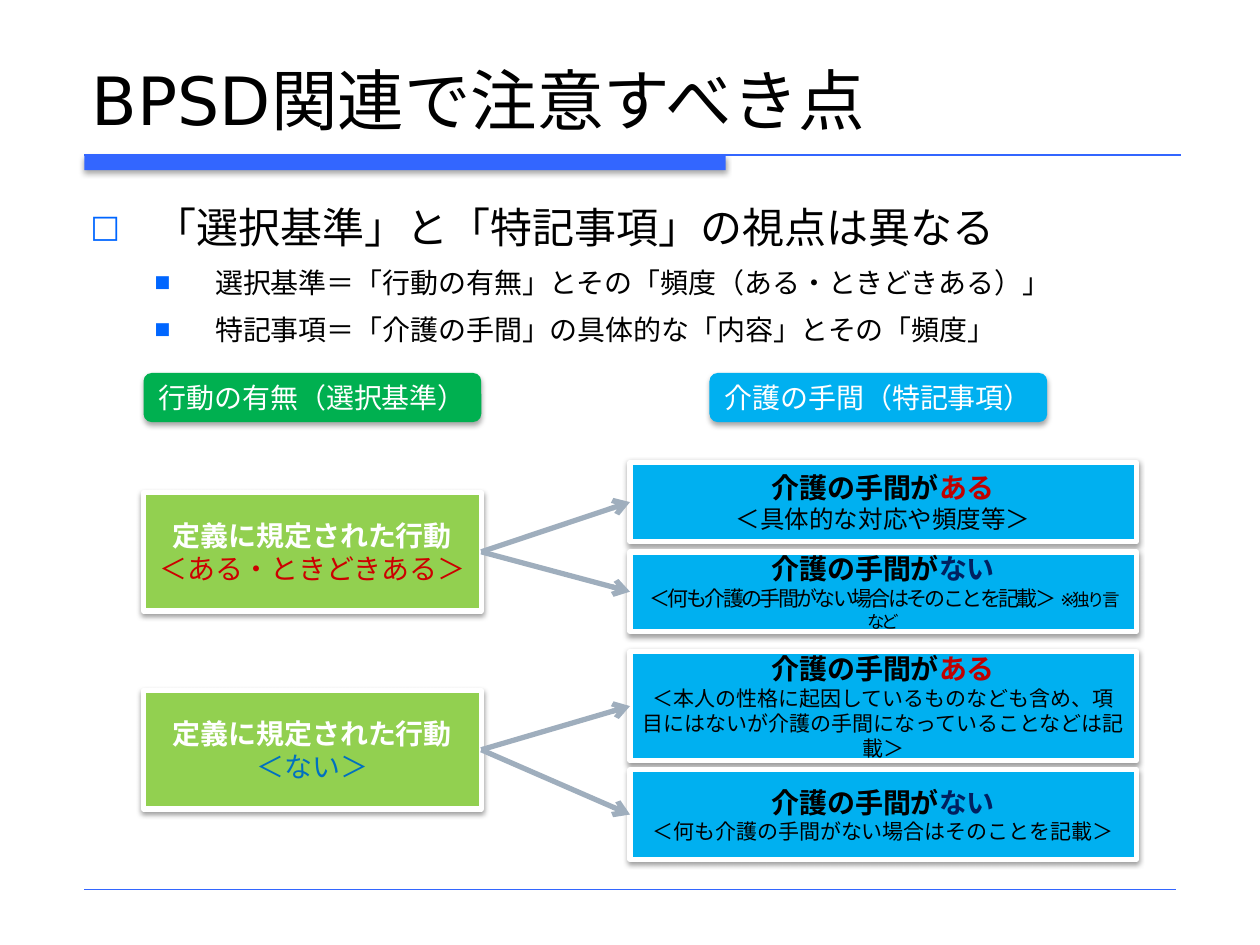
from dataclasses import dataclass

from lxml import etree
from pptx import Presentation
from pptx.dml.color import RGBColor
from pptx.enum.lang import MSO_LANGUAGE_ID
from pptx.enum.shapes import MSO_CONNECTOR, MSO_SHAPE
from pptx.enum.text import MSO_ANCHOR, PP_ALIGN
from pptx.oxml.ns import qn
from pptx.util import Pt

RECTANGLE = MSO_SHAPE.RECTANGLE
ROUNDED = MSO_SHAPE.ROUNDED_RECTANGLE
STRAIGHT = MSO_CONNECTOR.STRAIGHT
CENTER = PP_ALIGN.CENTER
JAPANESE = MSO_LANGUAGE_ID.JAPANESE
FONT = "DejaVu Sans"
BLACK, WHITE, RULE_BLUE, BULLET_BLUE = "000000", "FFFFFF", "3366FF", "0066FF"
GREEN, LIME, SKY, ARROW_GRAY = "00B050", "92D050", "00B0F0", "9FAEBD"
LEFT_X, LEFT_WIDTH = 82, 193
RIGHT_X, RIGHT_WIDTH = 360, 289.4


@dataclass
class TextRun:
    text: str
    size: float
    color: str = BLACK
    bold: bool = False
    spacing: float = 0


@dataclass
class Bullet:
    text: str
    size: float
    symbol: str
    percent: int
    indent: float
    hanging: float
    space_before: float
    level: int


@dataclass
class Burden:
    top: float
    height: float
    answer: TextRun
    details: list[TextRun]


@dataclass
class Behaviour:
    top: float
    answer: TextRun
    burdens: list[Burden]


def rgb(color: str) -> RGBColor:
    return RGBColor.from_string(color)


def add_run(paragraph, item: TextRun) -> None:
    run = paragraph.add_run()
    run.text = item.text
    font = run.font
    font.name, font.size, font.bold = FONT, Pt(item.size), item.bold
    font.language_id = JAPANESE
    font.color.rgb = rgb(item.color)
    properties = run._r.get_or_add_rPr()
    if item.spacing:
        properties.set("spc", str(int(item.spacing * 100)))
    etree.SubElement(properties, qn("a:ea"), typeface=FONT)


def add_text_box(slide, left: float, top: float, width: float, height: float, anchor):
    frame = slide.shapes.add_textbox(Pt(left), Pt(top), Pt(width), Pt(height)).text_frame
    frame.word_wrap = True
    frame.vertical_anchor = anchor
    return frame


def add_bullet(paragraph, bullet: Bullet) -> None:
    paragraph.level = bullet.level
    paragraph.line_spacing = 1.2
    paragraph.space_before = Pt(bullet.space_before)
    properties = paragraph._p.get_or_add_pPr()
    properties.set("marL", str(Pt(bullet.indent)))
    properties.set("indent", str(-Pt(bullet.hanging)))
    color = etree.SubElement(properties, qn("a:buClr"))
    etree.SubElement(color, qn("a:srgbClr"), val=BULLET_BLUE)
    etree.SubElement(properties, qn("a:buSzPct"), val=str(bullet.percent * 1000))
    etree.SubElement(properties, qn("a:buFont"), typeface=FONT)
    etree.SubElement(properties, qn("a:buChar"), char=bullet.symbol)
    add_run(paragraph, TextRun(bullet.text, bullet.size))


def add_shadow(shape, opacity: int, distance: float) -> None:
    shape.shadow.inherit = False
    effects = shape._element.spPr.find(qn("a:effectLst"))
    shadow = etree.SubElement(
        effects, qn("a:outerShdw"), blurRad=str(Pt(3.1)), dist=str(Pt(distance)),
        dir="5400000", rotWithShape="0")
    color = etree.SubElement(shadow, qn("a:srgbClr"), val=BLACK)
    etree.SubElement(color, qn("a:alpha"), val=str(opacity * 1000))


def add_box(slide, preset, left: float, top: float, width: float, height: float,
            fill: str, lines: list[list[TextRun]], outlined: bool = True):
    shape = slide.shapes.add_shape(preset, Pt(left), Pt(top), Pt(width), Pt(height))
    shape.fill.solid()
    shape.fill.fore_color.rgb = rgb(fill)
    if outlined:
        shape.line.color.rgb = rgb(WHITE)
        shape.line.width = Pt(3)
        add_shadow(shape, 38, 1.6)
    else:
        shape.line.fill.background()
        add_shadow(shape, 35, 1.8)
    frame = shape.text_frame
    frame.word_wrap = True
    frame.vertical_anchor = MSO_ANCHOR.MIDDLE
    for index, line in enumerate(lines):
        paragraph = frame.add_paragraph() if index else frame.paragraphs[0]
        paragraph.alignment = CENTER
        for item in line:
            add_run(paragraph, item)
    return shape


def add_line(slide, left: float, top: float, right: float, bottom: float,
             color: str, width: float):
    line = slide.shapes.add_connector(STRAIGHT, Pt(left), Pt(top), Pt(right), Pt(bottom))
    line.line.color.rgb = rgb(color)
    line.line.width = Pt(width)
    etree.SubElement(line._element.spPr, qn("a:effectLst"))
    return line


def join_with_arrow(slide, source, target) -> None:
    arrow = add_line(slide, 0, 0, 0, 0, ARROW_GRAY, 3)
    arrow.begin_connect(source, 3)
    arrow.end_connect(target, 1)
    etree.SubElement(arrow.line._get_or_add_ln(), qn("a:tailEnd"), type="arrow")


def add_behaviour(slide, behaviour: Behaviour) -> None:
    source = add_box(slide, RECTANGLE, LEFT_X, behaviour.top, LEFT_WIDTH, 67.7, LIME,
                     [[TextRun("定義に規定された行動", 16, WHITE, True)], [behaviour.answer]])
    for burden in behaviour.burdens:
        heading = [TextRun("介護の手間が", 16, bold=True), burden.answer]
        target = add_box(slide, RECTANGLE, RIGHT_X, burden.top, RIGHT_WIDTH,
                         burden.height, SKY, [heading, burden.details])
        join_with_arrow(slide, source, target)


PRESENT = TextRun("ある", 16, "C00000", True)
ABSENT = TextRun("ない", 16, "002060", True)
NO_BURDEN = "＜何も介護の手間がない場合はそのことを記載＞"
BULLETS = [
    Bullet("「選択基準」と「特記事項」の視点は異なる", 24, "□", 75, 36.7, 36.7, 5.5, 0),
    Bullet("選択基準＝「行動の有無」とその「頻度（ある・ときどきある）」",
           16, "■", 60, 71.3, 34.6, 3.8, 1),
    Bullet("特記事項＝「介護の手間」の具体的な「内容」とその「頻度」",
           16, "■", 60, 71.3, 34.6, 3.8, 1),
]
BEHAVIOURS = [
    Behaviour(281.5, TextRun("＜ある・ときどきある＞", 16, "CC0000"), [
        Burden(264.2, 45.4, PRESENT, [TextRun("＜具体的な対応や頻度等＞", 14)]),
        Burden(315.4, 45.4, ABSENT, [TextRun(NO_BURDEN + " ", 12, spacing=-1.5),
                                     TextRun("※独り言など", 10, spacing=-1.5)]),
    ]),
    Behaviour(394.6, TextRun("＜ない＞", 16, "0070C0"), [
        Burden(372.2, 62.6, PRESENT, [TextRun(
            "＜本人の性格に起因しているものなども含め、項目にはないが"
            "介護の手間になっていることなどは記載＞", 12)]),
        Burden(439.9, 51.1, ABSENT, [TextRun(NO_BURDEN, 12)]),
    ]),
]


def main() -> None:
    presentation = Presentation()
    presentation.slide_width, presentation.slide_height = Pt(720), Pt(540)
    slide = presentation.slides.add_slide(presentation.slide_layouts[6])

    # Rules above and below the content
    add_box(slide, RECTANGLE, 48.2, 88.6, 366.5, 8.6, RULE_BLUE, [], False).shadow.inherit = False
    add_line(slide, 48.2, 88.6, 674.6, 88.6, RULE_BLUE, 0.75)
    add_line(slide, 48.2, 508.3, 671.8, 508.3, RULE_BLUE, 0.25)

    # Title and bullets
    title = add_text_box(slide, 45.4, 23.8, 630, 59, MSO_ANCHOR.BOTTOM)
    add_run(title.paragraphs[0], TextRun("BPSD関連で注意すべき点", 38))
    body = add_text_box(slide, 44.6, 105.8, 630, 419.8, MSO_ANCHOR.TOP)
    for index, bullet in enumerate(BULLETS):
        add_bullet(body.add_paragraph() if index else body.paragraphs[0], bullet)

    # Column headings
    for left, color, text in ((LEFT_X, GREEN, "行動の有無（選択基準）"),
                              (405.4, SKY, "介護の手間（特記事項）")):
        add_box(slide, ROUNDED, left, 213.1, LEFT_WIDTH, 28.1, color,
                [[TextRun(text, 16, WHITE)]], False)

    # Behaviours and the burdens they lead to
    for behaviour in BEHAVIOURS:
        add_behaviour(slide, behaviour)

    presentation.save("out.pptx")


if __name__ == "__main__":
    main()
